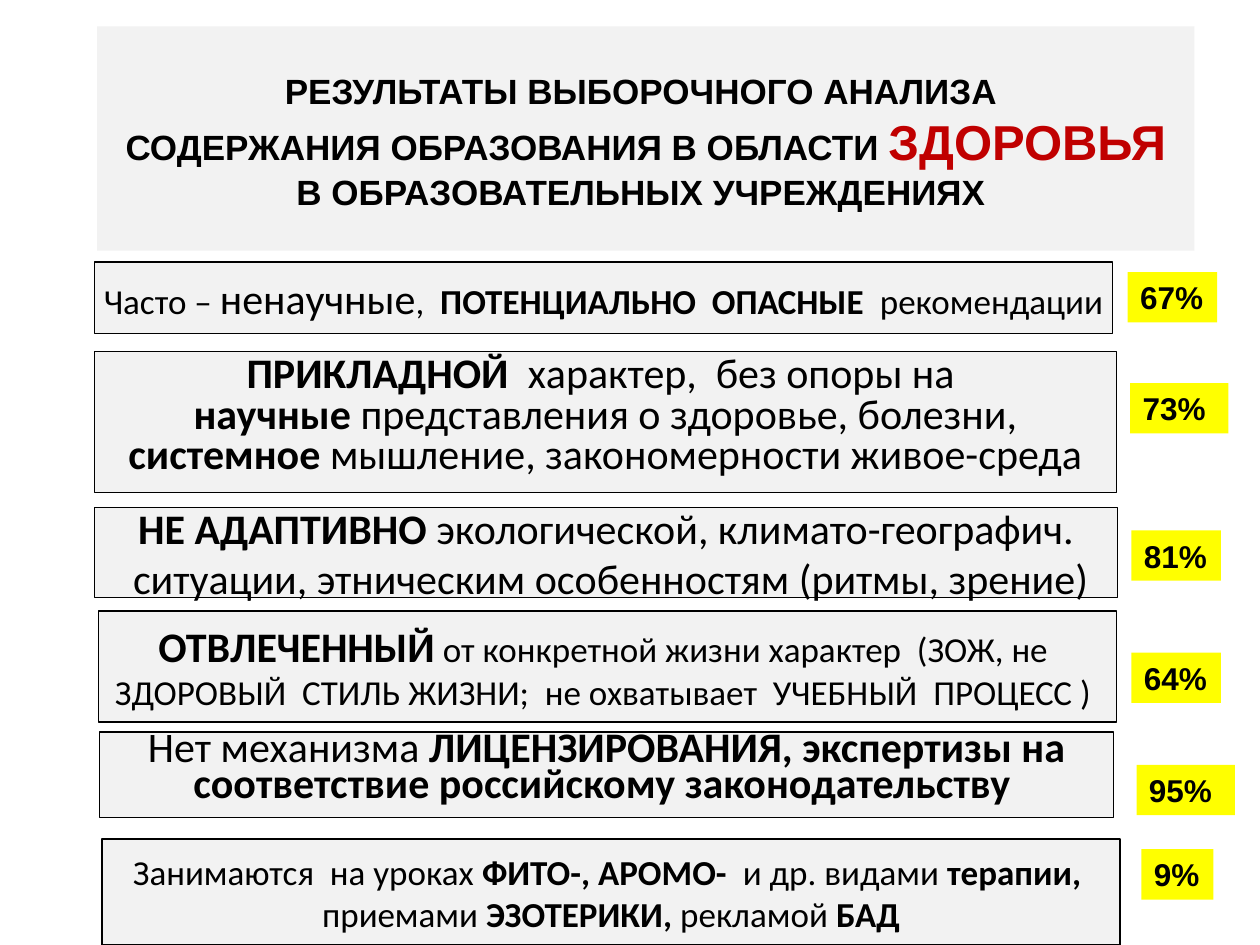
from pptx import Presentation
from pptx import util as u
from pptx.dml.color import RGBColor
from pptx.enum import shapes, text

COLS, ROWS = 100, 75


def tint(code):
    return RGBColor.from_string(code)


def write(par, words, size=20, bold=False, font="Calibri", color="000000"):
    run = par.add_run()
    run.text = words
    run.font.size = u.Pt(size)
    run.font.bold = bold
    run.font.name = font
    run.font.color.rgb = tint(color)


class Deck:
    gray, gold, black, red = "F2F2F2", "FFFF00", "000000", "C00000"

    def __init__(self):
        self.prs = Presentation()
        self.prs.slide_width = u.Inches(10)
        self.prs.slide_height = u.Inches(7.5)
        self.col = self.prs.slide_width / COLS
        self.row = self.prs.slide_height / ROWS
        self.slide = self.prs.slides.add_slide(self.prs.slide_layouts[6])

    def box(self, x, y, w, h, fill, edge=None):
        box = self.slide.shapes.add_shape(
            shapes.MSO_SHAPE.RECTANGLE,
            int(x * self.col), int(y * self.row),
            int(w * self.col), int(h * self.row))
        box.shadow.inherit = False
        box.fill.solid()
        box.fill.fore_color.rgb = tint(fill)
        if edge:
            box.line.color.rgb = tint(edge)
            box.line.width = u.Pt(0.75)
        else:
            box.line.fill.background()
        return box.text_frame

    def fill(self, frame, lines, top=None, gap=None, wrap=False, **base):
        frame.word_wrap = wrap
        frame.vertical_anchor = text.MSO_ANCHOR.MIDDLE
        if top is not None:
            frame.vertical_anchor = text.MSO_ANCHOR.TOP
            frame.margin_top = int(top * self.row)
        for i, line in enumerate(lines):
            par = frame.add_paragraph() if i else frame.paragraphs[0]
            par.alignment = text.PP_ALIGN.CENTER
            if gap:
                par.line_spacing = gap
            for words, style in line:
                write(par, words, **{**base, **style})

    def title(self, lines, x, y, w, h):
        frame = self.box(x, y, w, h, self.gray)
        self.fill(frame, lines, top=3.4, wrap=True, bold=True, font="Arial")

    def claim(self, lines, x, y, w, h, **style):
        frame = self.box(x, y, w, h, self.gray, self.black)
        self.fill(frame, lines, **style)

    def share(self, words, x, y, w):
        frame = self.box(x, y, w, 4, self.gold)
        frame.word_wrap = True
        frame.margin_right = 0
        frame.vertical_anchor = text.MSO_ANCHOR.TOP
        par = frame.paragraphs[0]
        par.alignment = text.PP_ALIGN.LEFT
        write(par, words, size=18, bold=True, font="Arial")


def main():
    deck = Deck()
    plain, bold, big = {}, {"bold": True}, {"size": 24}
    head = {"size": 28, "color": deck.red}

    deck.title([
        [("РЕЗУЛЬТАТЫ ВЫБОРОЧНОГО АНАЛИЗА ", plain)],
        [("СОДЕРЖАНИЯ ОБРАЗОВАНИЯ В ОБЛАСТИ ", plain), ("ЗДОРОВЬЯ", head)],
        [("В ОБРАЗОВАТЕЛЬНЫХ УЧРЕЖДЕНИЯХ ", plain)],
    ], 7.7, 2.1, 87.1, 17.8)

    deck.claim([
        [("Часто – ", plain), ("ненаучные", big), (",  ", plain),
         ("ПОТЕНЦИАЛЬНО  ОПАСНЫЕ", bold), ("  рекомендации", plain)],
    ], 7.5, 20.8, 80.8, 5.7)

    deck.claim([
        [("ПРИКЛАДНОЙ  ", bold), ("характер,  без опоры на ", plain)],
        [("научные", bold), (" представления о здоровье, болезни,", plain)],
        [("системное", bold),
         (" мышление, закономерности живое-среда", plain)],
    ], 7.5, 27.9, 81.1, 11.2, top=0.4, gap=0.8, **big)

    deck.claim([
        [("НЕ АДАПТИВНО ", bold),
         ("экологической, климато-географич.", plain)],
        [(" ситуации, этническим особенностям (ритмы, зрение)", plain)],
    ], 7.5, 40.3, 81.2, 7.1, **big)

    deck.claim([
        [("ОТВЛЕЧЕННЫЙ", {**big, **bold}),
         (" от конкретной жизни характер  (ЗОЖ, не ", plain)],
        [("ЗДОРОВЫЙ  СТИЛЬ ЖИЗНИ;  не охватывает  УЧЕБНЫЙ  ПРОЦЕСС ) ",
          plain)],
    ], 7.8, 48.5, 80.8, 8.8)

    deck.claim([
        [("Нет механизма ", plain),
         ("ЛИЦЕНЗИРОВАНИЯ, экспертизы на", bold)],
        [("соответствие российскому законодательству ", bold)],
    ], 7.9, 58.1, 80.5, 6.8, top=0.2, gap=0.7, **big)

    deck.claim([
        [("Занимаются  на уроках ", plain), ("ФИТО-, АРОМО-  ", bold),
         ("и др. видами ", plain), ("терапии, ", bold)],
        [("приемами ", plain), ("ЭЗОТЕРИКИ,", bold),
         (" рекламой ", plain), ("БАД", bold)],
    ], 8.1, 66.6, 80.8, 8.4)

    for words, x, y, w in [
        ("67%", 89.5, 21.6, 7.1),
        ("73%", 89.7, 30.4, 7.8),
        ("81%", 89.8, 42.1, 7.1),
        ("64%", 89.8, 51.8, 7.1),
        ("95%", 90.2, 60.7, 7.8),
        ("9%", 90.6, 67.4, 5.7),
    ]:
        deck.share(words, x, y, w)

    deck.prs.save("out.pptx")


if __name__ == "__main__":
    main()
